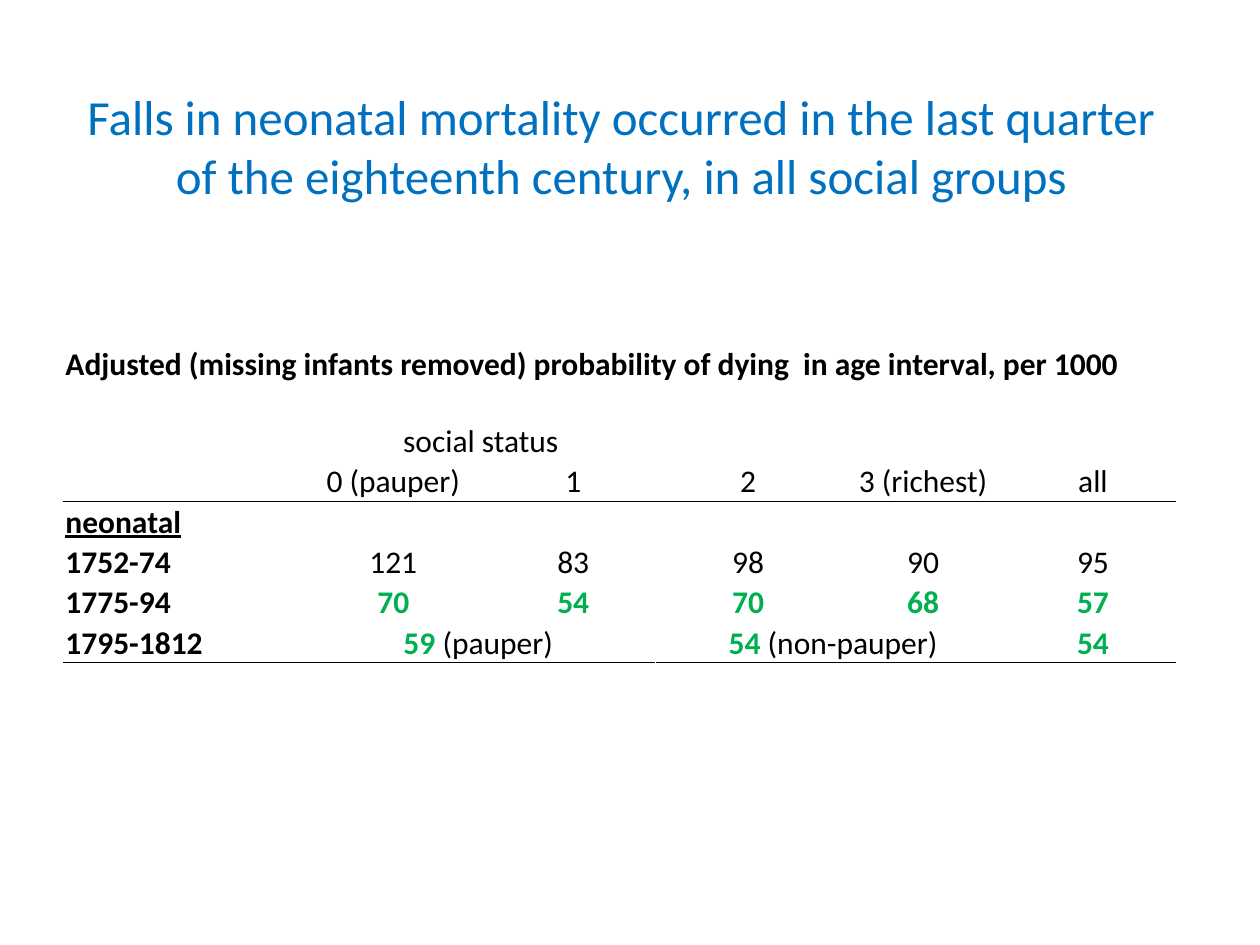
from lxml import etree
from pptx import Presentation
from pptx.dml.color import RGBColor
from pptx.enum.text import MSO_ANCHOR, PP_ALIGN
from pptx.oxml.ns import qn
from pptx.util import Inches, Pt

CENTER, LEFT = PP_ALIGN.CENTER, PP_ALIGN.LEFT
TOP, MIDDLE, BOTTOM = MSO_ANCHOR.TOP, MSO_ANCHOR.MIDDLE, MSO_ANCHOR.BOTTOM
BLUE = RGBColor(0x00, 0x70, 0xC0)
GREEN = RGBColor(0x00, 0xB0, 0x50)
BLACK = RGBColor(0x00, 0x00, 0x00)
FONT = "Calibri"
TITLE_ONLY = 5

TITLE = ("Falls in neonatal mortality occurred in the last quarter "
         "of the eighteenth century, in all social groups")
CAPTION = "Adjusted (missing infants removed) probability of dying  in age interval, per 1000"

# The narrow fourth column lets the merged cells of different rows end at different places.
COLUMN_SHARES = [1.88, 1.47, 1.35, 0.04, 1.39, 1.39, 1.31]
ROW_SHARES = [1.9, 1, 1, 1, 1, 1, 1]
VALUE_COLUMNS = [1, 2, 4, 5, 6]
HEADER_ROW, SECTION_ROW, LAST_ROW = 2, 3, 6
MERGES = [(0, 0, 6), (1, 1, 3), (2, 2, 3), (3, 2, 3), (4, 2, 3), (5, 2, 3),
          (6, 1, 2), (6, 3, 5)]  # row, first column, last column
VALUE_ROWS = [
    (2, ["0 (pauper)", "1", "2", "3 (richest)", "all"], BLACK, False),
    (4, ["121", "83", "98", "90", "95"], BLACK, False),
    (5, ["70", "54", "70", "68", "57"], GREEN, True),
]
ROW_LABELS = {4: "1752-74", 5: "1775-94", 6: "1795-1812"}


def add_run(paragraph, text, size, color, bold=False, underline=False):
    run = paragraph.add_run()
    run.text = text
    font = run.font
    font.name, font.size, font.bold, font.underline = FONT, Pt(size), bold, underline
    font.color.rgb = color


def write_cell(cell, text, color=BLACK, bold=False, underline=False, align=CENTER):
    paragraph = cell.text_frame.paragraphs[0]
    paragraph.alignment = align
    add_run(paragraph, text, 18, color, bold, underline)


def draw_border(cell, side):
    """Draw a 1 pt black line on one side of a cell: lnT or lnB."""
    line = etree.Element(qn("a:" + side), w=str(Pt(1)))
    fill = etree.SubElement(line, qn("a:solidFill"))
    etree.SubElement(fill, qn("a:srgbClr"), val=str(BLACK))
    cell._tc.get_or_add_tcPr().insert(0, line)


def add_title(slide, left, top, width, height):
    title = slide.shapes.title
    title.left, title.top, title.width, title.height = left, top, width, height
    title.text_frame.vertical_anchor = MIDDLE
    paragraph = title.text_frame.paragraphs[0]
    paragraph.alignment = CENTER
    add_run(paragraph, TITLE, 28, BLUE)


def add_plain_table(slide, left, top, width, height):
    """Add an unfilled table with the column and row shares and merges applied."""
    table = slide.shapes.add_table(len(ROW_SHARES), len(COLUMN_SHARES),
                                   left, top, width, height).table
    table.first_row = table.horz_banding = False
    for column, share in zip(table.columns, COLUMN_SHARES):
        column.width = int(width * share / sum(COLUMN_SHARES))
    for row, share in zip(table.rows, ROW_SHARES):
        row.height = int(height * share / sum(ROW_SHARES))
    for cell in table.iter_cells():
        cell.fill.background()
        cell.vertical_anchor = BOTTOM
        cell.margin_left = cell.margin_right = cell.margin_top = Inches(0.01)
        cell.margin_bottom = 0
    for row, first, last in MERGES:
        table.cell(row, first).merge(table.cell(row, last))
    return table


def add_mortality_table(slide, left, top, width, height):
    table = add_plain_table(slide, left, top, width, height)

    table.cell(0, 0).vertical_anchor = TOP
    write_cell(table.cell(0, 0), CAPTION, bold=True, align=LEFT)
    write_cell(table.cell(1, 1), "social status")
    write_cell(table.cell(SECTION_ROW, 0), "neonatal", bold=True, underline=True, align=LEFT)
    for row, label in ROW_LABELS.items():
        write_cell(table.cell(row, 0), label, bold=True, align=LEFT)
    for row, values, color, bold in VALUE_ROWS:
        for column, value in zip(VALUE_COLUMNS, values):
            write_cell(table.cell(row, column), value, color, bold)

    for column, value, group in [(1, "59 ", "(pauper)"), (3, "54 ", "(non-pauper)"),
                                 (6, "54", "")]:
        cell = table.cell(LAST_ROW, column)
        write_cell(cell, value, GREEN, bold=True)
        if group:
            write_cell(cell, group)

    for row, side in [(HEADER_ROW, "lnB"), (SECTION_ROW, "lnT"), (LAST_ROW, "lnB")]:
        for column in range(len(COLUMN_SHARES)):
            draw_border(table.cell(row, column), side)


def main():
    presentation = Presentation()
    presentation.slide_width, presentation.slide_height = Inches(10), Inches(7.5)
    slide = presentation.slides.add_slide(presentation.slide_layouts[TITLE_ONLY])
    add_title(slide, Inches(0.43), Inches(0.53), Inches(9), Inches(1.25))
    add_mortality_table(slide, Inches(0.51), Inches(2.73), Inches(8.82), Inches(2.53))
    presentation.save("out.pptx")


if __name__ == "__main__":
    main()
